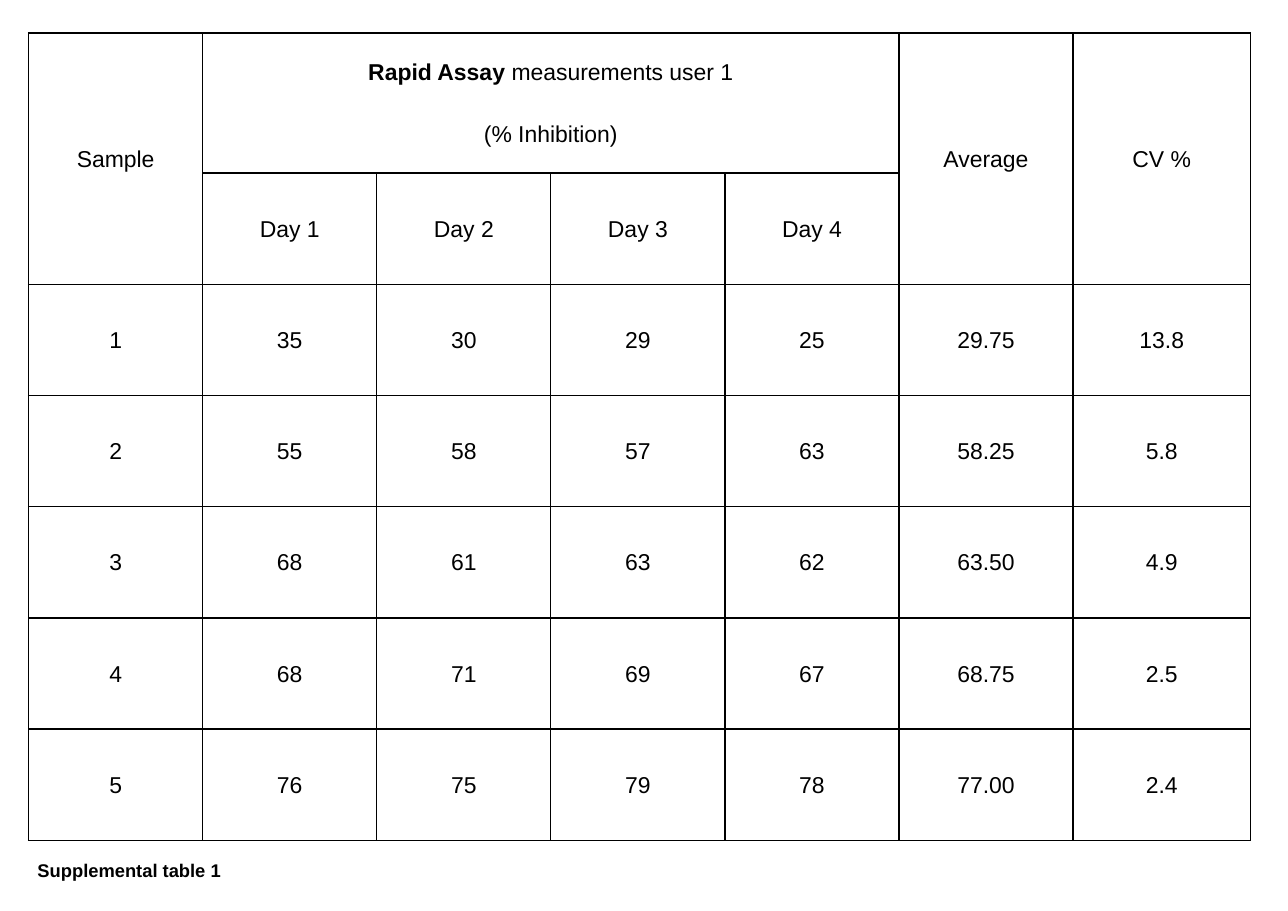
from lxml import etree
from pptx import Presentation
from pptx import util as u
from pptx.dml import color
from pptx.enum import text
from pptx.oxml import ns

theme = {"font": "Arial", "ink": "000000", "cell": 15, "note": 12, "line": 1, "gap": 12}


def add_run(para, words, size, bold=False):
    run = para.add_run()
    run.text = words
    run.font.name = theme["font"]
    run.font.size = u.Pt(size)
    run.font.bold = bold
    run.font.color.rgb = color.RGBColor.from_string(theme["ink"])


def add_edge(cell):
    props = cell._tc.get_or_add_tcPr()
    for side in ("lnL", "lnR", "lnT", "lnB"):
        line = etree.SubElement(props, ns.qn("a:" + side), w=str(u.Pt(theme["line"])))
        fill = etree.SubElement(line, ns.qn("a:solidFill"))
        etree.SubElement(fill, ns.qn("a:srgbClr"), val=theme["ink"])


deck = Presentation()
deck.slide_width = u.Inches(11.69)
deck.slide_height = u.Inches(8.27)
slide = deck.slides.add_slide(deck.slide_layouts[5])

note = slide.shapes.title
note.left, note.top = u.Inches(0.33), u.Inches(7.8)
note.width, note.height = u.Inches(1.68), u.Inches(0.39)
frame = note.text_frame
frame.margin_left = u.Inches(0.01)
frame.margin_right = frame.margin_top = frame.margin_bottom = 0
frame.word_wrap = False
frame.auto_size = text.MSO_AUTO_SIZE.NONE
frame.vertical_anchor = text.MSO_ANCHOR.TOP
para = frame.paragraphs[0]
para.alignment = text.PP_ALIGN.LEFT
para.line_spacing = u.Pt(14.1)
add_run(para, "Supplemental table 1", theme["note"], True)

days = ["Day 1", "Day 2", "Day 3", "Day 4"]
rows = [
    ["Sample", "", "", "", "", "Average", "CV %"],
    ["", *days, "", ""],
    ["1", "35", "30", "29", "25", "29.75", "13.8"],
    ["2", "55", "58", "57", "63", "58.25", "5.8"],
    ["3", "68", "61", "63", "62", "63.50", "4.9"],
    ["4", "68", "71", "69", "67", "68.75", "2.5"],
    ["5", "76", "75", "79", "78", "77.00", "2.4"],
]
wides = [1.58] * 6 + [1.61]
highs = [1.27] + [1.01] * 6

grid = slide.shapes.add_table(
    len(rows), len(wides), u.Inches(0.26), u.Inches(0.3),
    u.Inches(sum(wides)), u.Inches(sum(highs)),
).table
grid.first_row = grid.horz_banding = False
for col, wide in zip(grid.columns, wides):
    col.width = u.Inches(wide)
for row, high in zip(grid.rows, highs):
    row.height = u.Inches(high)

for c in (0, 5, 6):
    grid.cell(0, c).merge(grid.cell(1, c))
head = grid.cell(0, 1)
head.merge(grid.cell(0, 4))

for r, row in enumerate(rows):
    for c, words in enumerate(row):
        cell = grid.cell(r, c)
        add_edge(cell)
        cell.fill.background()
        cell.vertical_anchor = text.MSO_ANCHOR.MIDDLE
        cell.margin_left = cell.margin_right = u.Inches(0.01 if r > 1 and c > 4 else 0.05)
        cell.margin_top, cell.margin_bottom = u.Inches(0.01), 0
        if words:
            add_run(cell.text_frame.paragraphs[0], words, theme["cell"])

first = head.text_frame.paragraphs[0]
add_run(first, "Rapid Assay ", theme["cell"], True)
add_run(first, "measurements user 1", theme["cell"])
add_run(head.text_frame.add_paragraph(), "(% Inhibition)", theme["cell"])

for cell in grid.iter_cells():
    if not cell.is_spanned:
        for para in cell.text_frame.paragraphs:
            para.alignment = text.PP_ALIGN.CENTER
            para.space_before = para.space_after = u.Pt(theme["gap"])

deck.save("out.pptx")
